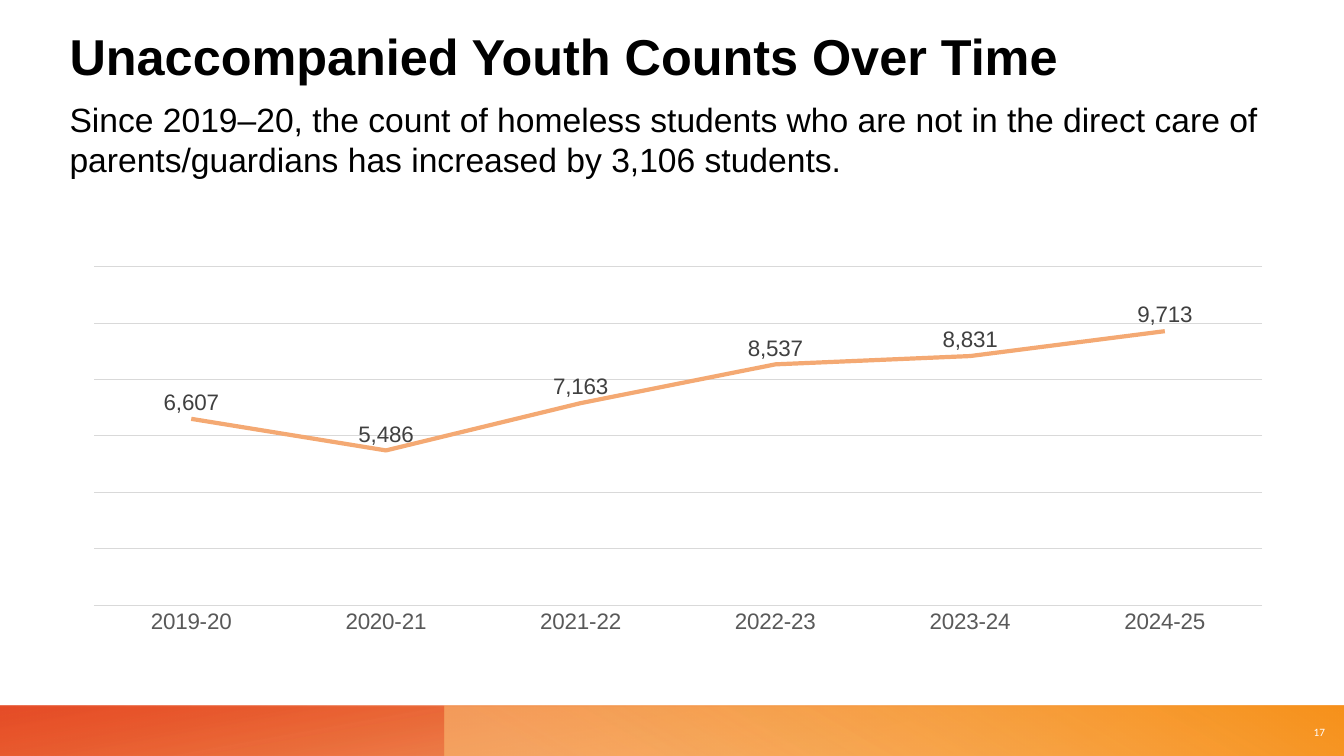
from dataclasses import dataclass

from pptx import Presentation
from pptx import util as u
from pptx.chart.data import CategoryChartData
from pptx.dml.color import RGBColor
from pptx.enum import chart as charts, shapes, text
from pptx.oxml import parse_xml
from pptx.oxml.ns import nsdecls, qn


@dataclass(frozen=True)
class Theme:
    font: str = "Arial"
    number_font: str = "Calibri"
    title_size: int = 36
    body_size: int = 24
    chart_size: int = 16
    number_size: int = 8
    ink: str = "000000"
    white: str = "FFFFFF"
    axis_text: str = "595959"
    label_text: str = "404040"
    rule: str = "D9D9D9"
    trend: str = "F4A973"
    # Gradient stops: position, colour, opacity in percent
    red_stops: tuple = ((0.14, "EC7016", 28), (1, "E64823", 85))
    amber_stops: tuple = ((0.09, "FBBE77", 55), (0.99, "F8931D", 100))


THEME = Theme()
WIDTH, HEIGHT = 13.33, 7.5
MARGIN = 0.69
CONTENT_WIDTH = 12.07
BAND_TOP, BAND_HEIGHT = 7, 0.5
AMBER_LEFT = WIDTH * 0.331

COUNTS = {
    "2019-20": 6607,
    "2020-21": 5486,
    "2021-22": 7163,
    "2022-23": 8537,
    "2023-24": 8831,
    "2024-25": 9713,
}


def inches(box):
    return [u.Inches(length) for length in box]


def style_font(font, size, color, name=THEME.font, bold=False):
    font.name, font.size, font.bold = name, u.Pt(size), bold
    font.color.rgb = RGBColor.from_string(color)


def style_line(line, color, width):
    line.color.rgb = RGBColor.from_string(color)
    line.width = u.Pt(width)


def add_text(page, box, words, size, color, inset=0, align=text.PP_ALIGN.LEFT,
             space_before=0, **font_options):
    frame = page.shapes.add_textbox(*inches(box)).text_frame
    frame.word_wrap = True
    frame.vertical_anchor = text.MSO_ANCHOR.MIDDLE
    frame.margin_left = frame.margin_right = u.Inches(inset)
    frame.margin_top = frame.margin_bottom = u.Inches(inset / 2)
    frame.text = words
    para = frame.paragraphs[0]
    para.alignment = align
    para.space_before = u.Pt(space_before)
    style_font(para.runs[0].font, size, color, **font_options)


def add_gradient_bar(page, box, stops, angle, rotation=0):
    """Add a mirrored bar whose gradient angle is measured clockwise."""
    bar = page.shapes.add_shape(shapes.MSO_SHAPE.RECTANGLE, *inches(box))
    bar.shadow.inherit = False
    bar.line.fill.background()
    bar.rotation = rotation
    bar._element.spPr.find(qn("a:xfrm")).set("flipH", "1")
    bar.fill.gradient()
    bar.fill.gradient_angle = 360 - angle
    for stop, (position, color, _) in zip(bar.fill.gradient_stops, stops):
        stop.position = position
        stop.color.rgb = RGBColor.from_string(color)
    colors = bar._element.spPr.iter(qn("a:srgbClr"))
    for color, (_, _, opacity) in zip(list(colors), stops):
        color.append(parse_xml(f'<a:alpha {nsdecls("a")} val="{opacity * 1000}"/>'))


def add_footer(page, box, number):
    left, top, width, height = box
    for offset in (0, 0.01):  # two translucent layers deepen the colours
        add_gradient_bar(page, (left, top + offset, width, height),
                         THEME.red_stops, 100, rotation=180)
        add_gradient_bar(page, (AMBER_LEFT, top + offset, width - AMBER_LEFT, height),
                         THEME.amber_stops, 240)
    add_text(page, (left + width - 0.57, top + 0.01, 0.48, height), number,
             THEME.number_size, THEME.white, inset=0.1,
             align=text.PP_ALIGN.RIGHT, name=THEME.number_font)


def add_heading(page, box, title, summary):
    left, top, width, _ = box
    add_text(page, (left, top, width, 0.7), title,
             THEME.title_size, THEME.ink, bold=True)
    add_text(page, (left, top + 0.73, width, 0.9), summary,
             THEME.body_size, THEME.ink, space_before=6)


def add_trend_chart(page, box, counts):
    data = CategoryChartData(number_format="#,##0")
    data.categories = list(counts)
    data.add_series("Series 1", list(counts.values()))
    chart = page.shapes.add_chart(charts.XL_CHART_TYPE.LINE, *inches(box), data).chart
    chart.has_legend = chart.has_title = False
    style_font(chart.font, THEME.chart_size, THEME.axis_text)

    years = chart.category_axis
    years.major_tick_mark = charts.XL_TICK_MARK.NONE
    style_font(years.tick_labels.font, THEME.chart_size, THEME.axis_text)
    style_line(years.format.line, THEME.rule, 0.75)

    scale = chart.value_axis
    scale.minimum_scale, scale.maximum_scale, scale.major_unit = 0, 12000, 2000
    scale.has_major_gridlines = True
    style_line(scale.major_gridlines.format.line, THEME.rule, 0.75)
    scale.visible = False

    plot = chart.plots[0]
    plot.vary_by_categories = False
    trend = plot.series[0]
    trend.smooth = False
    trend.marker.style = charts.XL_MARKER_STYLE.NONE
    style_line(trend.format.line, THEME.trend, 3)
    labels = trend.data_labels
    labels.show_value = True
    labels.position = charts.XL_LABEL_POSITION.ABOVE
    labels.number_format, labels.number_format_is_linked = "#,##0", False
    style_font(labels.font, THEME.chart_size, THEME.label_text)


def main():
    deck = Presentation()
    deck.slide_width, deck.slide_height = inches((WIDTH, HEIGHT))
    page = deck.slides.add_slide(deck.slide_layouts[6])
    add_footer(page, (0, BAND_TOP, WIDTH, BAND_HEIGHT), "17")
    add_heading(page, (MARGIN, 0.2, CONTENT_WIDTH, 1.63),
                "Unaccompanied Youth Counts Over Time",
                "Since 2019–20, the count of homeless students who are not in the "
                "direct care of parents/guardians has increased by 3,106 students.")
    add_trend_chart(page, (MARGIN, 2.57, CONTENT_WIDTH, 3.79), COUNTS)
    deck.save("out.pptx")


if __name__ == "__main__":
    main()
